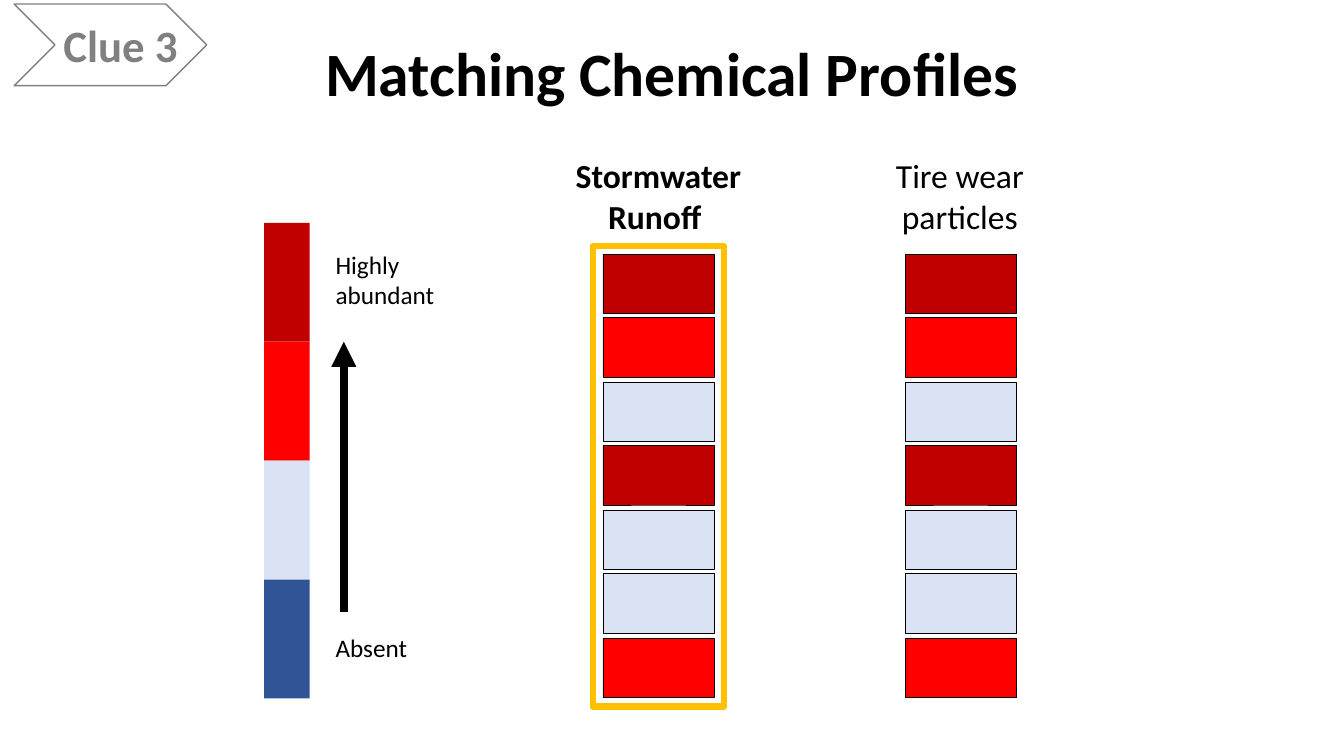
from lxml import etree
from pptx import Presentation
from pptx.dml.color import RGBColor
from pptx.enum.shapes import MSO_CONNECTOR, MSO_SHAPE
from pptx.enum.text import MSO_ANCHOR, MSO_AUTO_SIZE, PP_ALIGN
from pptx.oxml.ns import qn
from pptx.util import Emu, Pt

RECTANGLE, CHEVRON = MSO_SHAPE.RECTANGLE, MSO_SHAPE.CHEVRON
LEFT, CENTER = PP_ALIGN.LEFT, PP_ALIGN.CENTER
PX = 9144  # 100 px to the inch

BLACK, GRAY, GOLD = "000000", "808080", "FFC000"
DARK_RED, RED, PALE_BLUE, BLUE = "C00000", "FF0000", "DAE3F3", "2F5597"

prs = Presentation()
prs.slide_width, prs.slide_height = Emu(1333 * PX), Emu(750 * PX)
slide = prs.slides.add_slide(prs.slide_layouts[5])
shapes = slide.shapes


def add_box(kind, box, fill=None, line=None, line_width=1):
    shape = shapes.add_shape(kind, *[Emu(v * PX) for v in box])
    shape.shadow.inherit = False
    if fill:
        shape.fill.solid()
        shape.fill.fore_color.rgb = RGBColor.from_string(fill)
    else:
        shape.fill.background()
    if line:
        shape.line.color.rgb = RGBColor.from_string(line)
        shape.line.width = Pt(line_width)
    else:
        shape.line.fill.background()


def write(frame, text, size, color=BLACK, bold=False, align=LEFT):
    frame.text = text
    frame.word_wrap = True
    paragraph = frame.paragraphs[0]
    paragraph.alignment = align
    font = paragraph.runs[0].font
    font.name, font.size, font.bold = "Calibri", Pt(size), bold
    font.color.rgb = RGBColor.from_string(color)


# Title
title = shapes.title
title.left, title.top, title.width, title.height = [Emu(v * PX) for v in (11, 30, 1311, 91)]
write(title.text_frame, "Matching Chemical Profiles", 44, bold=True, align=CENTER)
title.text_frame.auto_size = MSO_AUTO_SIZE.NONE
title.text_frame.vertical_anchor = MSO_ANCHOR.MIDDLE
title.text_frame.paragraphs[0].line_spacing = 0.9

# Abundance scale
for step, color in enumerate([DARK_RED, RED, PALE_BLUE, BLUE]):
    add_box(RECTANGLE, (262, 221 + 118 * step, 45, 118), fill=color)

abundance_arrow = shapes.add_connector(
    MSO_CONNECTOR.STRAIGHT, *[Emu(v * PX) for v in (341, 607, 341, 339)])
abundance_arrow.line.color.rgb = RGBColor.from_string(BLACK)
abundance_arrow.line.width = Pt(6)
etree.SubElement(abundance_arrow.line._get_or_add_ln(), qn("a:tailEnd"), type="triangle")
etree.SubElement(abundance_arrow._element.spPr, qn("a:effectLst"))

# Chemical profiles: the same bands for both samples
profile = [DARK_RED, RED, PALE_BLUE, DARK_RED, PALE_BLUE, PALE_BLUE, RED]
for sample_left in (598, 898):
    for row, color in enumerate(profile):
        add_box(RECTANGLE, (sample_left, 252 + row * 127 // 2, 110, 59), color, BLACK, 0.25)
add_box(RECTANGLE, (588, 244, 130, 457), line=GOLD, line_width=4.5)

# Labels and clue tag
labels = [
    ("Highly abundant", (323, 242, 163, 71), 18, BLACK, False, LEFT),
    ("Absent", (323, 622, 136, 40), 18, BLACK, False, LEFT),
    ("Stormwater Runoff ", (539, 149, 228, 91), 24, BLACK, True, CENTER),
    ("Tire wear particles", (838, 149, 228, 91), 24, BLACK, False, CENTER),
    ("Clue 3", (53, 13, 165, 64), 32, GRAY, True, LEFT),
]
for text, box, size, color, bold, align in labels:
    label = shapes.add_textbox(*[Emu(v * PX) for v in box])
    write(label.text_frame, text, size, color, bold, align)
add_box(CHEVRON, (14, 4, 191, 81), line=GRAY)

prs.save("out.pptx")
